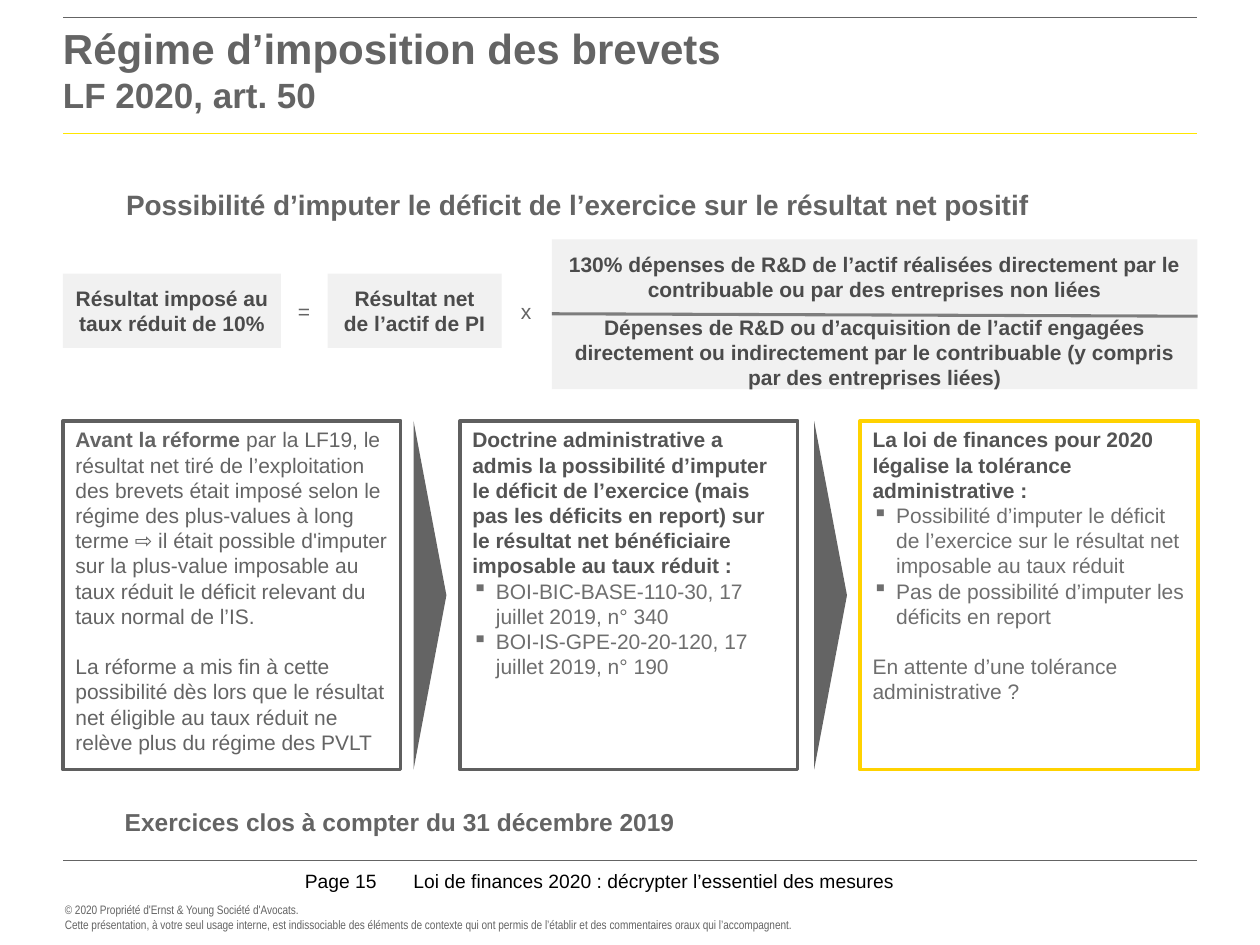
from lxml.etree import SubElement
from pptx import Presentation
from pptx.dml.color import RGBColor
from pptx.enum.shapes import MSO_CONNECTOR, MSO_SHAPE
from pptx.enum.text import MSO_ANCHOR, PP_ALIGN
from pptx.oxml.ns import qn
from pptx.util import Pt

COLORS = {
    "grey": "646464", "black": "000000", "yellow": "FFE600", "gold": "FFD200",
    "panel": "F1F1F1", "formula": "4B4B4B", "fraction": "7D7D7D",
    "border": "5F5F5F", "lead": "545454", "detail": "6E6E6E",
}

prs = Presentation()
prs.slide_width, prs.slide_height = Pt(720), Pt(540)
slide = prs.slides.add_slide(prs.slide_layouts[6])


def add_text(box, text, size, color="grey", bold=False, fill=None, outline=None,
             align=PP_ALIGN.LEFT, anchor=MSO_ANCHOR.TOP, insets=(7.2, 3.6, 7.2, 3.6),
             font="Arial"):
    bounds = [Pt(length) for length in box]
    if fill or outline:
        shape = slide.shapes.add_shape(MSO_SHAPE.RECTANGLE, *bounds)
        shape.shadow.inherit = False
        if fill:
            shape.fill.solid()
            shape.fill.fore_color.rgb = RGBColor.from_string(COLORS[fill])
        else:
            shape.fill.background()
        if outline:
            shape.line.color.rgb = RGBColor.from_string(COLORS[outline])
            shape.line.width = Pt(2)
        else:
            shape.line.fill.background()
    else:
        shape = slide.shapes.add_textbox(*bounds)
    frame = shape.text_frame
    frame.word_wrap = True
    frame.vertical_anchor = anchor
    (frame.margin_left, frame.margin_top,
     frame.margin_right, frame.margin_bottom) = [Pt(inset) for inset in insets]
    frame.text = text
    for paragraph in frame.paragraphs:
        paragraph.alignment = align
        for run in paragraph.runs:
            run.font.name = font
            run.font.size = Pt(size)
            run.font.bold = bold
            run.font.color.rgb = RGBColor.from_string(COLORS[color])
    return frame


def add_rule(start, end, color, width):
    rule = slide.shapes.add_connector(
        MSO_CONNECTOR.STRAIGHT, *[Pt(length) for length in (*start, *end)])
    rule.line.color.rgb = RGBColor.from_string(COLORS[color])
    rule.line.width = Pt(width)
    SubElement(rule._element.spPr, qn("a:effectLst"))


# Footer
flush = (0, 0, 0, 0)
add_text((236.2, 496.8, 334, 16), "Loi de finances 2020 : décrypter l’essentiel des mesures",
         11, "black", insets=flush)
add_text((174.2, 496.8, 52.6, 16), "Page 15", 11, "black", insets=flush)
add_text((30, 512, 540, 24.5),
         "© 2020 Propriété d'Ernst & Young Société d'Avocats.\v"
         "Cette présentation, à votre seul usage interne, est indissociable des éléments "
         "de contexte qui ont permis de l’établir et des commentaires oraux qui "
         "l’accompagnent.", 7, font="Arial Narrow")

# Page rules
for y, color, width in [(76.3, "yellow", 1), (491.8, "grey", 0.25), (10.1, "grey", 0.5)]:
    add_rule((36, y), (684, y), color, width)

# Title and headline
title = add_text((36, 10.1, 648, 67.7), "Régime d’imposition des brevets\vLF 2020, art. 50",
                 24, bold=True, insets=(0, 2.9, 0, 0))
title.paragraphs[0].runs[1].font.size = Pt(20)
add_text((36, 95, 648.7, 43.2),
         "Possibilité d’imputer le déficit de l’exercice sur le résultat net positif",
         16, bold=True, anchor=MSO_ANCHOR.MIDDLE, insets=(36, 3.6, 7.2, 3.6))

# Formula: operands on panels, operators between them
operands = [
    (36, 156.4, 124.6, "Résultat imposé au taux réduit de 10%"),
    (187.2, 156.4, 99.4, "Résultat net de l’actif de PI"),
    (315.4, 136.8, 368.9, "130% dépenses de R&D de l’actif réalisées directement par le "
     "contribuable ou par des entreprises non liées"),
    (315.4, 179.9, 368.9, "Dépenses de R&D ou d’acquisition de l’actif engagées directement "
     "ou indirectement par le contribuable (y compris par des entreprises liées)"),
]
for left, top, width, operand in operands:
    add_text((left, top, width, 42.5), operand, 12, "formula", True, "panel",
             align=PP_ALIGN.CENTER, anchor=MSO_ANCHOR.MIDDLE)
for left, operator in [(159.8, "="), (286.6, "x")]:
    add_text((left, 156.4, 28, 42.5), operator, 12,
             align=PP_ALIGN.CENTER, anchor=MSO_ANCHOR.MIDDLE)
add_rule((315.4, 179.3), (684.4, 180.7), "fraction", 1.75)

# Three stages: lead, bulleted details, closing remark
stages = [
    (36, "border", "grey", "Avant la réforme", [],
     "La réforme a mis fin à cette possibilité dès lors que le résultat net éligible "
     "au taux réduit ne relève plus du régime des PVLT"),
    (262.8, "border", "lead",
     "Doctrine administrative a admis la possibilité d’imputer le déficit de l’exercice "
     "(mais pas les déficits en report) sur le résultat net bénéficiaire imposable au "
     "taux réduit :",
     ["BOI-BIC-BASE-110-30, 17 juillet 2019, n° 340",
      "BOI-IS-GPE-20-20-120, 17 juillet 2019, n° 190"], None),
    (491.5, "gold", "lead",
     "La loi de finances pour 2020 légalise la tolérance administrative :",
     ["Possibilité d’imputer le déficit de l’exercice sur le résultat net imposable au "
      "taux réduit",
      "Pas de possibilité d’imputer les déficits en report"],
     "En attente d’une tolérance administrative ?"),
]
stage_frames = []
for left, outline, lead_color, lead, details, closing in stages:
    lines = [lead, *details] + ([closing] if closing else [])
    frame = add_text((left, 240.5, 193, 199.4), "\n".join(lines), 12, lead_color, True,
                     outline=outline)
    stage_frames.append(frame)
    for paragraph in frame.paragraphs[1:]:
        font = paragraph.runs[0].font
        font.bold = False
        if details:
            font.color.rgb = RGBColor.from_string(COLORS["detail"])
    for paragraph in frame.paragraphs[1:1 + len(details)]:
        properties = paragraph._p.get_or_add_pPr()
        properties.set("marL", str(Pt(13.5)))
        properties.set("indent", str(Pt(-13.5)))
        SubElement(properties, qn("a:buChar")).set("char", "▪")
    if closing:
        frame.paragraphs[-1].space_before = Pt(14.4)

# The first lead continues in regular weight
reform = stage_frames[0].paragraphs[0].add_run()
reform.text = (" par la LF19, le résultat net tiré de l’exploitation des brevets était imposé "
               "selon le régime des plus-values à long terme ⇨ il était possible d'imputer "
               "sur la plus-value imposable au taux réduit le déficit relevant du taux "
               "normal de l’IS.")
reform.font.name = "Arial"
reform.font.size = Pt(12)
reform.font.color.rgb = RGBColor.from_string(COLORS["grey"])

# Pointers between the stages
for center in (245.7, 474.6):
    pointer = slide.shapes.add_shape(
        MSO_SHAPE.ISOSCELES_TRIANGLE, Pt(center - 99.7), Pt(330.8), Pt(199.4), Pt(18.8))
    pointer.rotation = 90
    pointer.shadow.inherit = False
    pointer.fill.solid()
    pointer.fill.fore_color.rgb = RGBColor.from_string(COLORS["grey"])
    pointer.line.fill.background()

# Effective date
add_text((36, 457.2, 404, 24.5), "Exercices clos à compter du 31 décembre 2019", 14,
         bold=True, anchor=MSO_ANCHOR.MIDDLE, insets=(35.3, 3.6, 7.2, 3.6))

prs.save("out.pptx")
